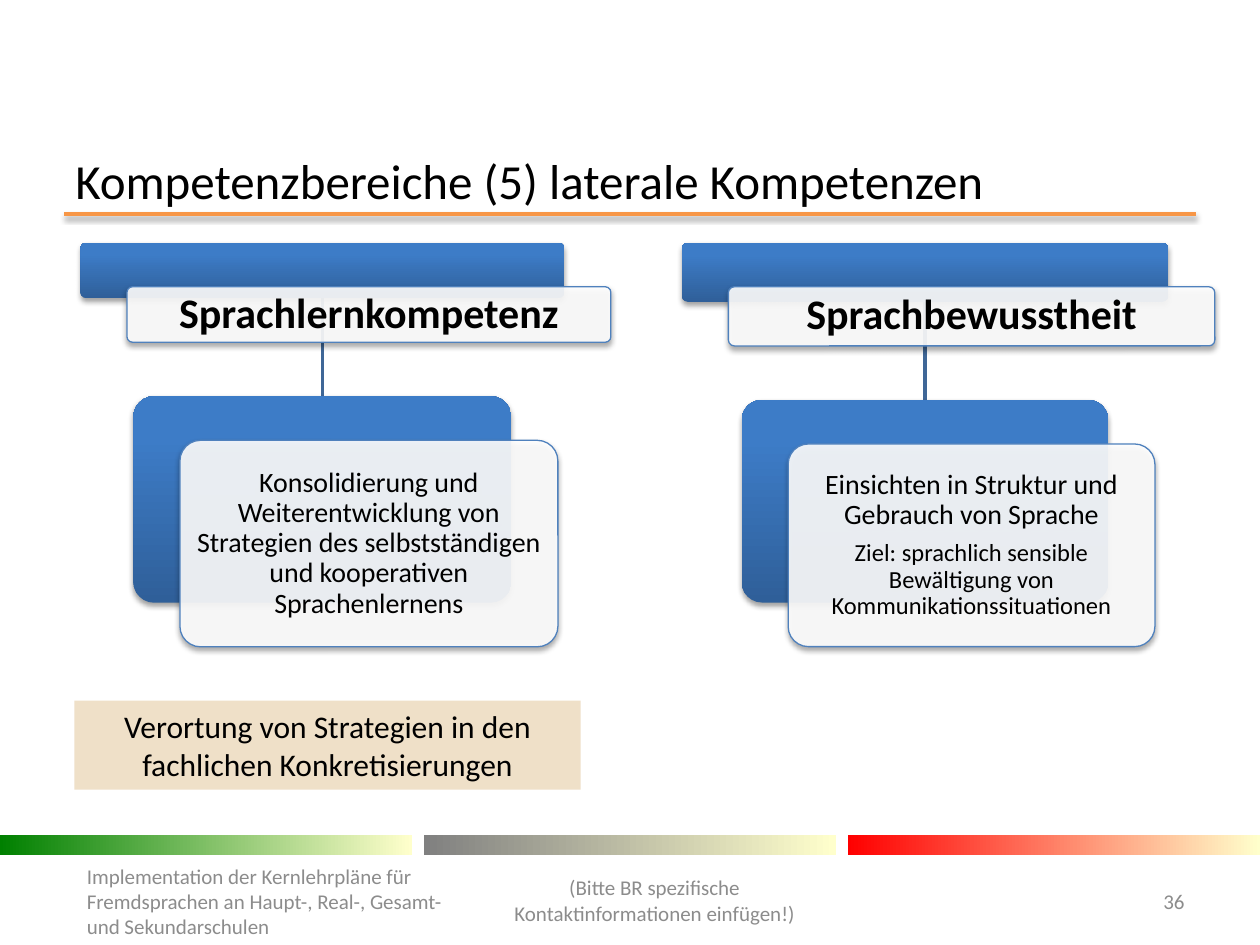
import pptx
import pptx.dml.color
import pptx.enum.shapes
import pptx.enum.text
import pptx.oxml
import pptx.oxml.ns
import pptx.util
from pptx.util import Pt

RGBColor = pptx.dml.color.RGBColor
SHAPE = pptx.enum.shapes.MSO_SHAPE
ALIGN = pptx.enum.text.PP_ALIGN
ANCHOR = pptx.enum.text.MSO_ANCHOR

BLACK = RGBColor(0x00, 0x00, 0x00)
WHITE = RGBColor(0xFF, 0xFF, 0xFF)
GRAY = RGBColor(0x8C, 0x8C, 0x8C)
ORANGE = RGBColor(0xF7, 0x96, 0x46)
DARK_BLUE = RGBColor(0x2F, 0x5F, 0x99)
LIGHT_BLUE = RGBColor(0x3D, 0x7C, 0xC7)
OUTLINE_BLUE = RGBColor(0x4F, 0x81, 0xBD)
LINK_BLUE = RGBColor(0x3F, 0x67, 0x97)
SAND = RGBColor(0xEF, 0xE0, 0xC8)
CREAM = RGBColor(0xFF, 0xFF, 0xCC)
BAND_COLORS = [
    RGBColor(0x00, 0x80, 0x00),
    RGBColor(0x80, 0x80, 0x80),
    RGBColor(0xFF, 0x00, 0x00),
]

CARD_SHIFT_X, CARD_SHIFT_Y = 26.6, 25.2


def set_effects(shape, shadow):
    """Replace the theme's effects by a soft drop shadow or by none."""
    properties = shape._element.spPr
    for old in properties.findall(pptx.oxml.ns.qn("a:effectLst")):
        properties.remove(old)
    content = (
        '<a:outerShdw blurRad="39370" dist="22860" dir="5400000" rotWithShape="0">'
        '<a:srgbClr val="000000"><a:alpha val="36000"/></a:srgbClr></a:outerShdw>'
    ) if shadow else ""
    properties.append(pptx.oxml.parse_xml(
        f'<a:effectLst {pptx.oxml.ns.nsdecls("a")}>{content}</a:effectLst>'))


def add_line(slide, x1, y1, x2, y2, color, shadow=False):
    line = slide.shapes.add_connector(
        pptx.enum.shapes.MSO_CONNECTOR.STRAIGHT, Pt(x1), Pt(y1), Pt(x2), Pt(y2))
    line.line.color.rgb = color
    line.line.width = Pt(2)
    set_effects(line, shadow)


def add_box(slide, kind, left, top, width, height, shadow=False):
    box = slide.shapes.add_shape(kind, Pt(left), Pt(top), Pt(width), Pt(height))
    if kind == SHAPE.ROUNDED_RECTANGLE:
        box.adjustments[0] = 0.1
    box.line.fill.background()
    set_effects(box, shadow)
    return box


def fill_gradient(shape, start, end, angle, end_position=1.0):
    shape.fill.gradient()
    shape.fill.gradient_angle = angle
    first, last = shape.fill.gradient_stops
    first.color.rgb = start
    last.color.rgb = end
    last.position = end_position


def write(shape, lines, color=BLACK, align=ALIGN.LEFT, bold=False, spacing=None):
    """Write (text, size) lines, one paragraph each, centred vertically."""
    frame = shape.text_frame
    frame.word_wrap = True
    frame.vertical_anchor = ANCHOR.MIDDLE
    for index, (text, size) in enumerate(lines):
        paragraph = frame.add_paragraph() if index else frame.paragraphs[0]
        paragraph.text = text
        paragraph.alignment = align
        paragraph.line_spacing = spacing
        if index:
            paragraph.space_before = Pt(5.6)
        paragraph.font.name = "Calibri"
        paragraph.font.size = Pt(size)
        paragraph.font.bold = bold
        paragraph.font.color.rgb = color


def add_text(slide, left, top, width, height, text, size, color, align=ALIGN.LEFT):
    box = slide.shapes.add_textbox(Pt(left), Pt(top), Pt(width), Pt(height))
    write(box, [(text, size)], color, align)


def add_card(slide, left, top, width, height, lines, bold=False):
    """Blue plate with a translucent text card shifted over it."""
    plate = add_box(slide, SHAPE.ROUNDED_RECTANGLE, left, top, width, height, True)
    fill_gradient(plate, DARK_BLUE, LIGHT_BLUE, 90, 0.8)
    card = add_box(slide, SHAPE.ROUNDED_RECTANGLE,
                   left + CARD_SHIFT_X, top + CARD_SHIFT_Y, width, height, True)
    card.fill.solid()
    card.fill.fore_color.rgb = WHITE
    color = card._element.spPr.find(".//" + pptx.oxml.ns.qn("a:srgbClr"))
    color.append(pptx.oxml.parse_xml(
        f'<a:alpha {pptx.oxml.ns.nsdecls("a")} val="90000"/>'))
    card.line.color.rgb = OUTLINE_BLUE
    card.line.width = Pt(0.75)
    frame = card.text_frame
    frame.margin_left = frame.margin_right = Pt(5)
    frame.margin_top = frame.margin_bottom = Pt(5)
    write(card, lines, align=ALIGN.CENTER, bold=bold, spacing=0.9)


def add_branch(slide, left, top, head_size, body_size, heading, lines):
    """Heading card linked to a body card centred below it."""
    head_width, head_height = head_size
    body_width, body_height = body_size
    center = left + head_width / 2
    body_top = top + head_height + 56
    add_line(slide, center, top + head_height, center, body_top, LINK_BLUE)
    add_card(slide, left, top, head_width, head_height, [(heading, 24)], True)
    add_card(slide, center - body_width / 2, body_top, body_width, body_height, lines)


def add_title(slide, left, top, width):
    add_text(slide, left, top, width, 28,
             "Kompetenzbereiche (5) laterale Kompetenzen", 28, BLACK)
    add_line(slide, left + 0.7, top + 33.8, left + width - 0.7, top + 33.8, ORANGE, True)


def add_note(slide, left, top, width, height):
    note = add_box(slide, SHAPE.RECTANGLE, left, top, width, height)
    note.fill.solid()
    note.fill.fore_color.rgb = SAND
    write(note, [("Verortung von Strategien in den fachlichen Konkretisierungen", 18)],
          align=ALIGN.CENTER)


def add_footer(slide, left, top, width):
    band_width = 235.4
    step = (width - band_width) / (len(BAND_COLORS) - 1)
    for index, color in enumerate(BAND_COLORS):
        band = add_box(slide, SHAPE.RECTANGLE, left + index * step, top, band_width, 11.5)
        fill_gradient(band, color, CREAM, 0)
    add_text(slide, left + 42.5, top + 13, 226.8, 49,
             "Implementation der Kernlehrpläne für Fremdsprachen an Haupt-, Real-, "
             "Gesamt- und Sekundarschulen", 12, GRAY)
    add_text(slide, left + 269.3, top + 11.5, 209.5, 51,
             "(Bitte BR spezifische Kontaktinformationen einfügen!)",
             12, GRAY, ALIGN.CENTER)
    add_text(slide, left + 638, top + 23.2, 46, 28.8, "36", 12, GRAY, ALIGN.RIGHT)


def main():
    presentation = pptx.Presentation()
    presentation.slide_width, presentation.slide_height = Pt(720), Pt(540)
    slide = presentation.slides.add_slide(presentation.slide_layouts[6])
    add_title(slide, 36, 88.6, 648)
    add_branch(slide, 46, 138.7, (276.5, 31.7), (216, 118), "Sprachlernkompetenz", [
        ("Konsolidierung und Weiterentwicklung von Strategien des selbstständigen "
         "und kooperativen Sprachenlernens", 16)])
    add_branch(slide, 389.6, 138.7, (278, 33.8), (209.6, 115.8), "Sprachbewusstheit", [
        ("Einsichten in Struktur und Gebrauch von Sprache", 16),
        ("Ziel: sprachlich sensible Bewältigung von Kommunikationssituationen", 14)])
    add_note(slide, 42.5, 400.3, 289.4, 51)
    add_footer(slide, 0, 477.3, 720)
    presentation.save("out.pptx")


if __name__ == "__main__":
    main()
